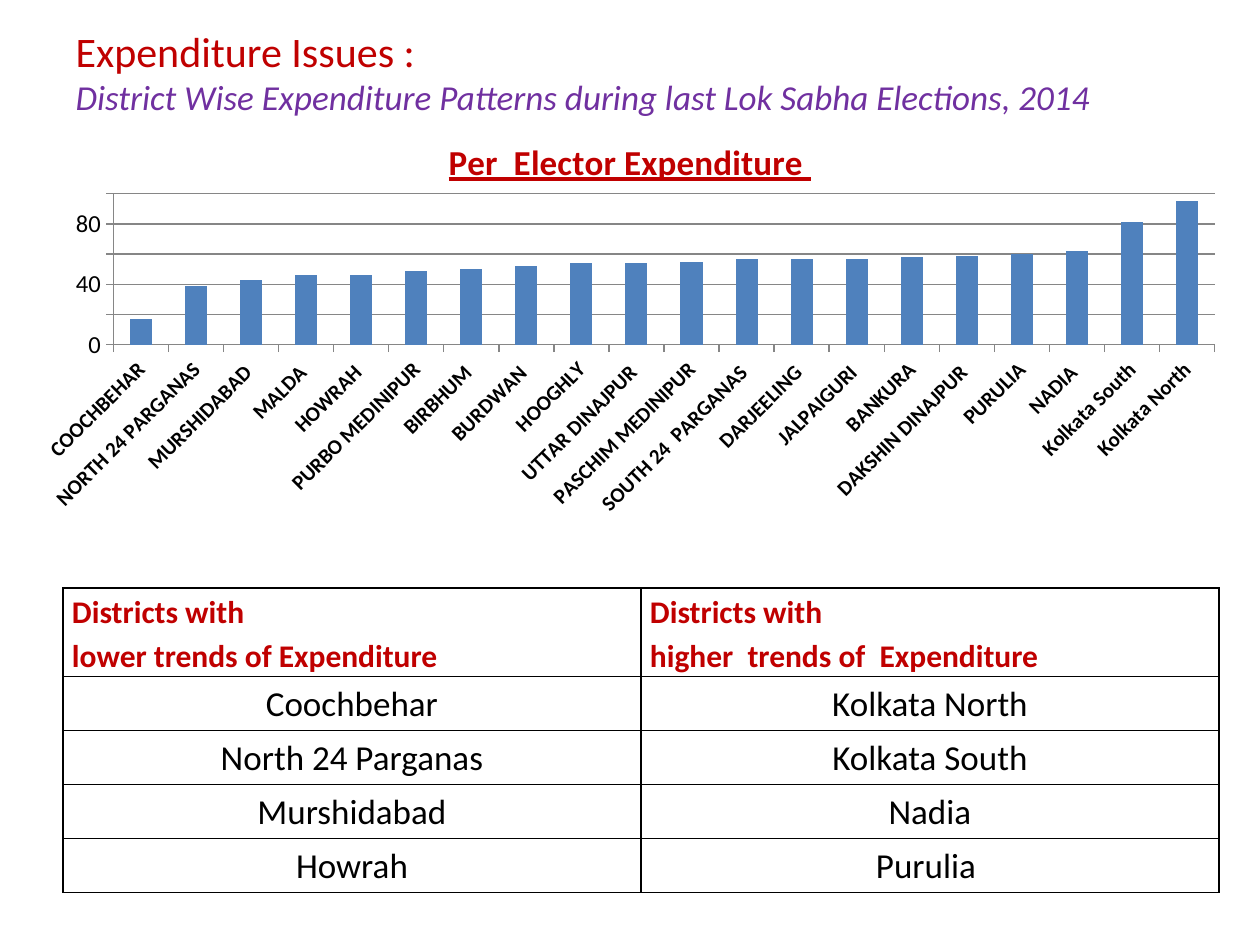
from dataclasses import dataclass

from lxml.etree import SubElement
from pptx import Presentation
from pptx.chart.data import CategoryChartData
from pptx.dml.color import RGBColor as RGB
from pptx.enum.chart import XL_CHART_TYPE as ChartType, XL_TICK_MARK as Tick
from pptx.enum.text import MSO_ANCHOR as Anchor, MSO_AUTO_SIZE as AutoSize, PP_ALIGN as Align
from pptx.oxml.ns import qn
from pptx.util import Emu, Pt


@dataclass(frozen=True)
class Theme:
    font: str = "Calibri"
    red: str = "C00000"
    purple: str = "7030A0"
    black: str = "000000"
    bar: str = "4F81BD"
    grid: str = "868686"
    title: int = 24
    large: int = 20
    header: int = 18
    value: int = 14
    category: int = 12


THEME = Theme()
PX_PER_INCH = 126

EXPENDITURE = {
    "COOCHBEHAR": 17, "NORTH 24 PARGANAS": 39, "MURSHIDABAD ": 43, "MALDA ": 46,
    "HOWRAH ": 46, "PURBO MEDINIPUR": 49, "BIRBHUM ": 50, "BURDWAN ": 52,
    "HOOGHLY": 54, "UTTAR DINAJPUR ": 54, "PASCHIM MEDINIPUR": 55,
    "SOUTH 24  PARGANAS ": 57, "DARJEELING ": 57, "JALPAIGURI ": 57, "BANKURA": 58,
    "DAKSHIN DINAJPUR ": 59, "PURULIA": 60, "NADIA ": 62,
    "Kolkata South": 81, "Kolkata North": 95,
}
TRENDS = [
    ("Districts with\nlower trends of Expenditure", "Districts with\nhigher  trends of  Expenditure"),
    ("Coochbehar", "Kolkata North"),
    ("North 24 Parganas", "Kolkata South"),
    ("Murshidabad", "Nadia"),
    ("Howrah", "Purulia "),
]


def px(n):
    return Emu(round(n * 914400 / PX_PER_INCH))


def box(*lengths):
    return [px(n) for n in lengths]


def style(font, size, color=THEME.black, bold=False, italic=False):
    font.name, font.size = THEME.font, Pt(size)
    font.bold, font.italic = bold, italic
    font.color.rgb = RGB.from_string(color)


def fill_title(sp):
    sp.left, sp.top, sp.width, sp.height = box(63, 35, 1134, 73)
    tf = sp.text_frame
    tf.text = ("Expenditure Issues :\n"
               "District Wise Expenditure Patterns during last Lok Sabha Elections, 2014")
    tf.vertical_anchor, tf.auto_size = Anchor.MIDDLE, AutoSize.NONE
    heading, subheading = tf.paragraphs
    for p in tf.paragraphs:
        p.alignment = Align.LEFT
    style(heading.runs[0].font, THEME.title, THEME.red)
    style(subheading.runs[0].font, THEME.large, THEME.purple, italic=True)


def set_plot_layout(chart, **fractions):
    """Fix the inner plot area as fractions of the chart's frame."""
    plot_area = chart._chartSpace.chart.plotArea
    layout = plot_area.find(qn("c:layout"))
    if layout is None:
        layout = SubElement(plot_area, qn("c:layout"))
        plot_area.insert(0, layout)
    manual = SubElement(layout, qn("c:manualLayout"))
    settings = {"layoutTarget": "inner", "xMode": "edge", "yMode": "edge", **fractions}
    for name, value in settings.items():
        SubElement(manual, qn(f"c:{name}")).set("val", str(value))


def format_axis(axis, size, bold=False):
    axis.major_tick_mark, axis.minor_tick_mark = Tick.OUTSIDE, Tick.NONE
    axis.format.line.color.rgb = RGB.from_string(THEME.grid)
    style(axis.tick_labels.font, size, bold=bold)


def add_expenditure_chart(s):
    data = CategoryChartData()
    data.categories = list(EXPENDITURE)
    data.add_series("Series 1", list(EXPENDITURE.values()))
    chart = s.shapes.add_chart(ChartType.COLUMN_CLUSTERED, *box(21, 116, 1218, 410), data).chart
    chart.has_legend = False
    chart.has_title = True
    tf = chart.chart_title.text_frame
    tf.text = "Per  Elector Expenditure "
    font = tf.paragraphs[0].runs[0].font
    style(font, THEME.large, THEME.red, bold=True)
    font.underline = True
    chart.chart_title.include_in_layout = False

    plot = chart.plots[0]
    plot.gap_width, plot.vary_by_categories = 150, False
    fill = plot.series[0].format.fill
    fill.solid()
    fill.fore_color.rgb = RGB.from_string(THEME.bar)
    set_plot_layout(chart, x=0.076, y=0.19, w=0.904, h=0.368)

    cat, val = chart.category_axis, chart.value_axis
    format_axis(cat, THEME.category, bold=True)
    cat._element.find(qn("c:txPr")).find(qn("a:bodyPr")).set("rot", "-2700000")
    format_axis(val, THEME.value)
    val.minimum_scale, val.maximum_scale, val.major_unit = 0, 100, 20
    val.tick_labels.number_format = "0"
    val.tick_labels.number_format_is_linked = False
    val.major_gridlines.format.line.color.rgb = RGB.from_string(THEME.grid)


def add_borders(cell):
    tc_pr = cell._tc.get_or_add_tcPr()
    for side in ("lnL", "lnR", "lnT", "lnB"):
        line = SubElement(tc_pr, qn(f"a:{side}"), w=str(Pt(1)))
        SubElement(SubElement(line, qn("a:solidFill")), qn("a:srgbClr"), val=THEME.black)


def fill_cell(cell, text, is_header):
    add_borders(cell)
    cell.fill.background()
    cell.margin_left = cell.margin_right = px(9)
    cell.margin_top = cell.margin_bottom = 0
    cell.vertical_anchor = Anchor.TOP
    cell.text_frame.text = text
    for p in cell.text_frame.paragraphs:
        p.line_spacing = 1.15
        p.alignment = Align.LEFT if is_header else Align.CENTER
        if is_header:
            style(p.runs[0].font, THEME.header, THEME.red, bold=True)
        else:
            style(p.runs[0].font, THEME.large)


def add_trends_table(s):
    header_height, row_height = 88, 54
    height = header_height + row_height * (len(TRENDS) - 1)
    table = s.shapes.add_table(len(TRENDS), 2, *box(63, 588, 1156, height)).table
    table.first_row = table.horz_banding = False
    for r, texts in enumerate(TRENDS):
        table.rows[r].height = px(row_height if r else header_height)
        for c, text in enumerate(texts):
            fill_cell(table.cell(r, c), text, is_header=r == 0)


def main():
    prs = Presentation()
    prs.slide_width, prs.slide_height = box(1260, 945)
    s = prs.slides.add_slide(prs.slide_layouts[5])
    fill_title(s.shapes.title)
    add_expenditure_chart(s)
    add_trends_table(s)
    prs.save("out.pptx")


if __name__ == "__main__":
    main()
